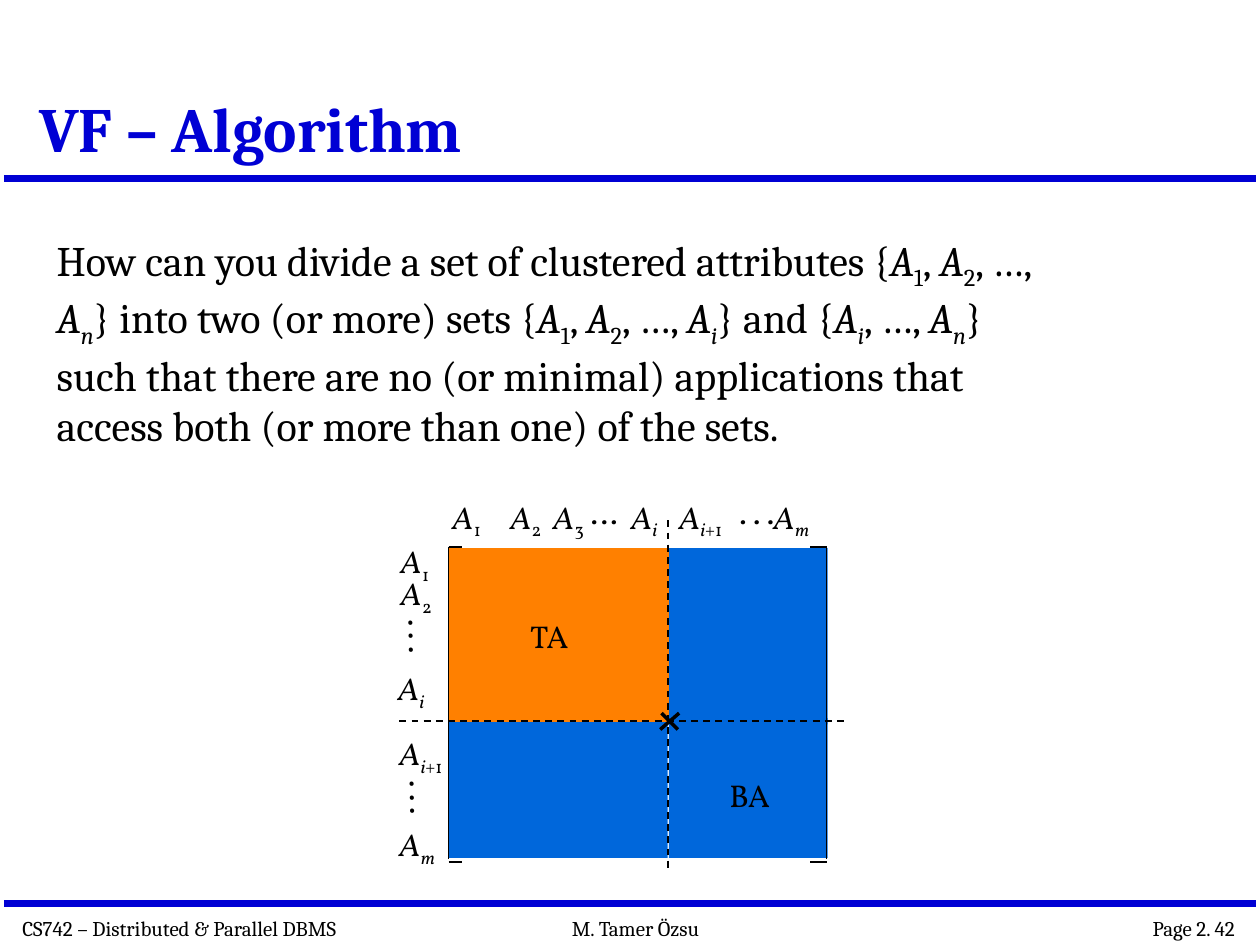
"""Build the vertical fragmentation algorithm slide."""
from dataclasses import dataclass

from lxml import etree
from pptx import Presentation
from pptx import util as u
from pptx.dml.color import RGBColor
from pptx.enum import dml, shapes, text
from pptx.oxml import ns


@dataclass(frozen=True)
class Theme:
    """Colours, fonts and type sizes."""
    ink: str = "000000"
    accent: str = "0000D4"
    top: str = "FF8000"
    bottom: str = "0067DB"
    main: str = "Cambria"
    label: str = "Vollkorn"
    title_size: int = 36
    body_size: int = 24
    label_size: int = 18
    footer_size: int = 12


THEME = Theme()
STYLES = {"*": (True, False), "_": (False, True), "~": (True, True)}

TITLE = "VF – Algorithm"
BODY = (
    "How can you divide a set of clustered attributes {|*A|_1|, |*A|_2|, …, |*A|~n"
    "|} into two (or more) sets {|*A|_1|, |*A|_2|, …, |*A|~i|} and {|*A|~i|, …, |*A|~n"
    "|} such that there are no (or minimal) applications that access both "
    "(or more than one) of the sets."
)
RULES = [1.42, 7.17]
FOOTERS = [
    ("CS742 – Distributed & Parallel DBMS", 0.08, 3.2, text.PP_ALIGN.LEFT),
    ("M. Tamer Özsu", 4.44, 1.39, text.PP_ALIGN.LEFT),
    ("Page 2. 42", 8.9, 1, text.PP_ALIGN.RIGHT),
]
COLUMNS = [("_1", 3.49), ("_2", 3.95), ("_3", 4.29), ("~i", 4.91), ("~i|_+1", 5.29), ("~m", 6.04)]
ROWS = [("_1", 3.08, 4.25), ("_2", 3.08, 4.51), ("~i", 3.06, 5.26), ("~i|_+1", 3.07, 5.78), ("~m", 3.07, 6.5)]
LABEL_WIDTHS = {"~i": 0.47, "~i|_+1": 0.63, "~m": 0.55}
NOTES = [
    ("…", 4.59, 3.86, 0.46, 0),
    (". . .", 5.77, 3.86, 0.52, 0),
    (". . .", 3.08, 4.87, 0.52, 89),
    (". . .", 3.09, 6.15, 0.52, 89),
    ("TA", 4.11, 4.85, 0.54, 0),
    ("BA", 5.69, 6.11, 0.56, 0),
]
BLOCKS = [
    (5.31, 4.35, 1.26, 1.4, THEME.bottom),
    (3.56, 5.7, 1.74, 1.11, THEME.bottom),
    (5.31, 5.7, 1.26, 1.11, THEME.bottom),
    (3.56, 4.35, 1.75, 1.38, THEME.top),
]
BRACKETS = [(3.56, 3.67), (6.56, 6.43)]
BRACKET_TOP, BRACKET_END, BRACKET_FOOT = 4.34, 6.82, 6.84
SPLITS = [(5.3, 4.13, 5.3, 6.92), (3.17, 5.72, 6.7, 5.72)]
CROSS = [(5.25, 5.66, 5.38, 5.79), (5.39, 5.66, 5.24, 5.79)]


def place(shape, left, top, width, height):
    """Move and size a shape."""
    shape.left, shape.top = u.Inches(left), u.Inches(top)
    shape.width, shape.height = u.Inches(width), u.Inches(height)


def write(frame, content, font=THEME.main, size=THEME.body_size, color=THEME.ink,
          bold=False, align=text.PP_ALIGN.LEFT):
    """Write spans split by bars; * is italic, _ subscript, ~ both."""
    para = frame.paragraphs[0]
    para.alignment = align
    for part in content.split("|"):
        italic, lowered = STYLES.get(part[0], (False, False))
        span = para.add_run()
        span.text = part[1:] if part[0] in STYLES else part
        span.font.name, span.font.size = font, u.Pt(size)
        span.font.bold, span.font.italic = bold, italic
        span.font.color.rgb = RGBColor.from_string(color)
        if lowered:
            span.font._element.set("baseline", "-25000")
    return para


def add_label(page, content, left, top, width, height, turn=0, **style):
    """Add an unwrapped text box."""
    box = page.shapes.add_textbox(0, 0, 0, 0)
    place(box, left, top, width, height)
    box.rotation = turn
    box.text_frame.word_wrap = False
    box.text_frame.auto_size = text.MSO_AUTO_SIZE.SHAPE_TO_FIT_TEXT
    write(box.text_frame, content, **style)


def add_line(page, ends, color=THEME.ink, width=1, dashed=False):
    """Add a straight line without a shadow."""
    line = page.shapes.add_connector(shapes.MSO_CONNECTOR.STRAIGHT, *map(u.Inches, ends))
    line.line.color.rgb = RGBColor.from_string(color)
    line.line.width = u.Pt(width)
    if dashed:
        line.line.dash_style = dml.MSO_LINE.DASH
    etree.SubElement(line._element.spPr, ns.qn("a:effectLst"))


def add_block(page, left, top, width, height, color):
    """Add a borderless filled rectangle."""
    block = page.shapes.add_shape(shapes.MSO_SHAPE.RECTANGLE, 0, 0, 0, 0)
    place(block, left, top, width, height)
    block.shadow.inherit = False
    block.fill.solid()
    block.fill.fore_color.rgb = RGBColor.from_string(color)
    block.line.fill.background()


def add_heading_and_body(page):
    """Fill the title and body placeholders."""
    title, body = page.shapes.title, page.placeholders[1]
    place(title, 0.21, 0.12, 7.83, 1.25)
    place(body, 0.35, 1.81, 8.17, 1.94)
    for box, anchor in ((title, text.MSO_ANCHOR.BOTTOM), (body, text.MSO_ANCHOR.TOP)):
        box.text_frame.word_wrap = True
        box.text_frame.auto_size = text.MSO_AUTO_SIZE.NONE
        box.text_frame.vertical_anchor = anchor
    heading = write(title.text_frame, TITLE, size=THEME.title_size, color=THEME.accent, bold=True)
    heading.line_spacing = 0.9
    para = write(body.text_frame, BODY)
    para.space_before = u.Pt(0.3 * THEME.body_size)
    properties = para._p.get_or_add_pPr()
    properties.set("marL", "0")
    properties.set("indent", "0")
    etree.SubElement(properties, ns.qn("a:buNone"))


def add_matrix(page):
    """Draw the split attribute matrix and its labels."""
    for block in BLOCKS:
        add_block(page, *block)
    for side, tip in BRACKETS:
        add_line(page, (side, BRACKET_TOP, side, BRACKET_END))
        for level in (BRACKET_TOP, BRACKET_FOOT):
            add_line(page, (side, level, tip, level))
    for ends in SPLITS:
        add_line(page, ends, dashed=True)
    for ends in CROSS:
        add_line(page, ends, width=2)
    style = dict(font=THEME.label, size=THEME.label_size)
    for index, left, top in [(index, left, 3.9) for index, left in COLUMNS] + ROWS:
        add_label(page, "*A|" + index, left, top, LABEL_WIDTHS.get(index, 0.48), 0.4, **style)
    for content, left, top, width, turn in NOTES:
        add_label(page, content, left, top, width, 0.41, turn, **style)


def main():
    """Build and save the deck."""
    deck = Presentation()
    deck.slide_width, deck.slide_height = u.Inches(10), u.Inches(7.5)
    page = deck.slides.add_slide(deck.slide_layouts[1])
    for level in RULES:
        add_line(page, (0.03, level, 9.97, level), color=THEME.accent, width=4)
    for content, left, width, align in FOOTERS:
        add_label(page, content, left, 7.22, width, 0.3, size=THEME.footer_size, align=align)
    add_heading_and_body(page)
    add_matrix(page)
    deck.save("out.pptx")


if __name__ == "__main__":
    main()
